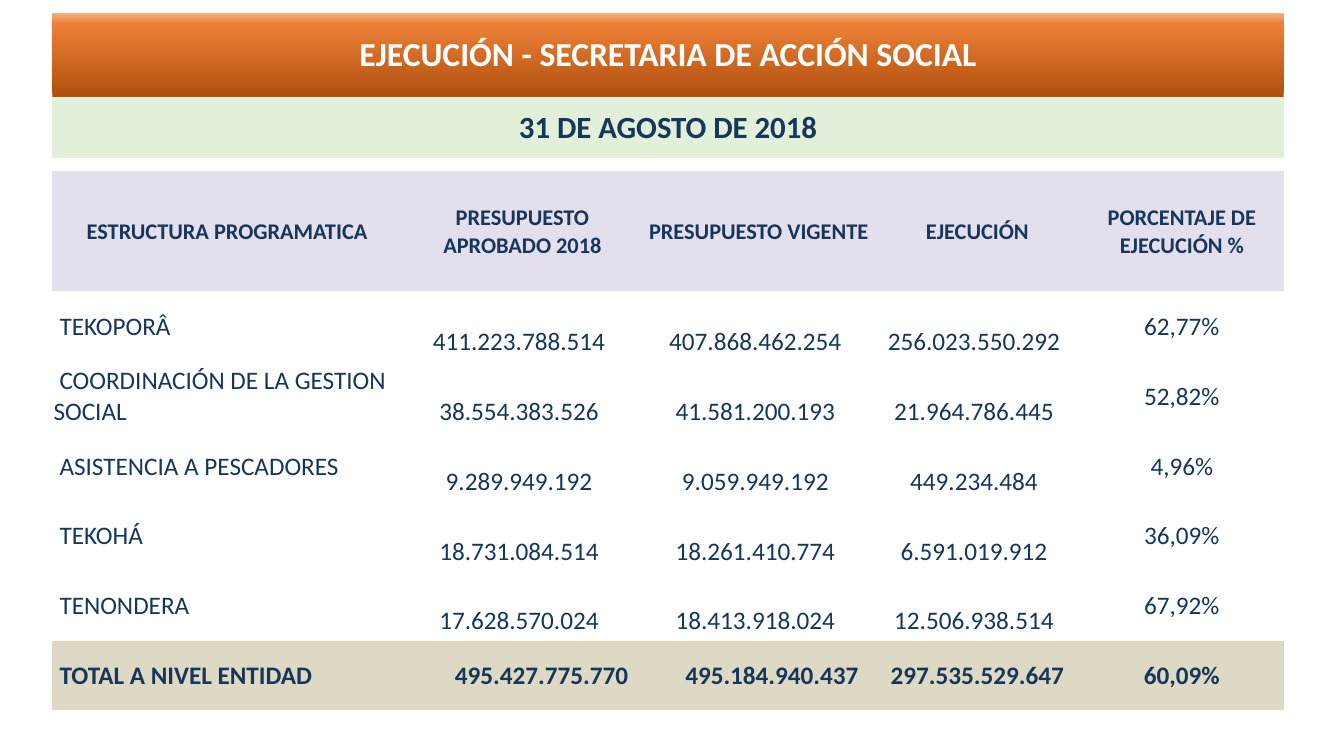
"""Build the budget execution slide of the social action office."""
from pptx import Presentation
from pptx.dml.color import RGBColor
from pptx.enum.text import MSO_ANCHOR as Anchor, PP_ALIGN as Align
from pptx.oxml import parse_xml
from pptx.oxml.ns import nsdecls, qn
from pptx.util import Cm, Pt

TITLE = "EJECUCIÓN - SECRETARIA DE ACCIÓN SOCIAL"
DATE = "31 DE AGOSTO DE 2018"
HEADS = ["ESTRUCTURA PROGRAMATICA", "PRESUPUESTO APROBADO 2018",
         "PRESUPUESTO VIGENTE", "EJECUCIÓN", "PORCENTAJE DE EJECUCIÓN %"]
ITEMS = [
    ("TEKOPORÂ", "411.223.788.514", "407.868.462.254", "256.023.550.292", "62,77%"),
    ("COORDINACIÓN DE LA GESTION SOCIAL", "38.554.383.526", "41.581.200.193",
     "21.964.786.445", "52,82%"),
    ("ASISTENCIA A PESCADORES", "9.289.949.192", "9.059.949.192", "449.234.484", "4,96%"),
    ("TEKOHÁ", "18.731.084.514", "18.261.410.774", "6.591.019.912", "36,09%"),
    ("TENONDERA", "17.628.570.024", "18.413.918.024", "12.506.938.514", "67,92%"),
]
TOTAL = ("TOTAL A NIVEL ENTIDAD", "495.427.775.770", "495.184.940.437",
         "297.535.529.647", "60,09%")

NAVY, WHITE, LILAC, SAND, GREEN = "16365C", "FFFFFF", "E4DFEC", "DDD9C4", "E2F0D9"
STOPS = [(0, "B0500F"), (88, "EE8137"), (100, "F4B183")]
WIDTHS = [8.81, 6.07, 5.84, 5.18, 5.13]
LEFT, TOP, BAND_TOP = 1.32, 4.32, 0.33
HEAD_H, ROW_H = 3.02, 1.76
BAND_HS = [2.11, 1.55]
INSET, DROP = 0.03, 0.79
SHIFTS = [INSET, 1.0, 0.7, INSET, INSET]
NO_GRID = "{2D5ABB26-0587-4C30-8999-92F81FD0307C}"


def color(code):
    return RGBColor.from_string(code)


def add_grid(slide, top, widths, heights):
    frame = slide.shapes.add_table(len(heights), len(widths), Cm(LEFT), Cm(top),
                                   Cm(sum(widths)), Cm(sum(heights)))
    grid = frame.table
    grid.first_row = grid.horz_banding = False
    grid._tbl.tblPr.find(qn("a:tableStyleId")).text = NO_GRID
    for col, width in zip(grid.columns, widths):
        col.width = Cm(width)
    for row, height in zip(grid.rows, heights):
        row.height = Cm(height)
    return grid


def write(cell, text, size=18, ink=NAVY, bold=False, fill=None, align=Align.CENTER,
          left=INSET, right=INSET, top=INSET, indent=0):
    cell.vertical_anchor = Anchor.MIDDLE
    cell.margin_left, cell.margin_right = Cm(left), Cm(right)
    cell.margin_top, cell.margin_bottom = Cm(top), 0
    if fill:
        cell.fill.solid()
        cell.fill.fore_color.rgb = color(fill)
    para = cell.text_frame.paragraphs[0]
    para.alignment = align
    if indent:
        para._p.get_or_add_pPr().set("indent", str(Cm(indent)))
    run = para.add_run()
    run.text = text
    font = run.font
    font.name, font.size, font.bold = "Calibri", Pt(size), bold
    font.color.rgb = color(ink)


def shade(cell, stops):
    marks = "".join(f'<a:gs pos="{pos * 1000}"><a:srgbClr val="{code}"/></a:gs>'
                    for pos, code in stops)
    cell._tc.get_or_add_tcPr().append(parse_xml(
        f'<a:gradFill {nsdecls("a")}><a:gsLst>{marks}</a:gsLst>'
        '<a:lin ang="16200000" scaled="0"/></a:gradFill>'))


def main():
    deck = Presentation()
    deck.slide_width, deck.slide_height = Cm(33.87), Cm(19.05)
    slide = deck.slides.add_slide(deck.slide_layouts[6])

    budget = add_grid(slide, TOP, WIDTHS, [HEAD_H] + [ROW_H] * (len(ITEMS) + 1))
    for col, head in enumerate(HEADS):
        write(budget.cell(0, col), head, size=16, bold=True, fill=LILAC)
    for row, item in enumerate(ITEMS + [TOTAL], 1):
        last = item is TOTAL
        look = dict(bold=last, fill=SAND if last else WHITE)
        write(budget.cell(row, 0), item[0], align=Align.LEFT, indent=0.15, **look)
        for col in range(1, 4):
            place = dict(left=SHIFTS[col]) if last else dict(top=DROP, right=0.2)
            write(budget.cell(row, col), item[col], **place, **look)
        write(budget.cell(row, 4), item[4], **look)

    band = add_grid(slide, BAND_TOP, [sum(WIDTHS)], BAND_HS)
    write(band.cell(0, 0), TITLE, size=24, ink=WHITE, bold=True)
    shade(band.cell(0, 0), STOPS)
    write(band.cell(1, 0), DATE, size=22, bold=True, fill=GREEN)
    deck.save("out.pptx")


if __name__ == "__main__":
    main()
